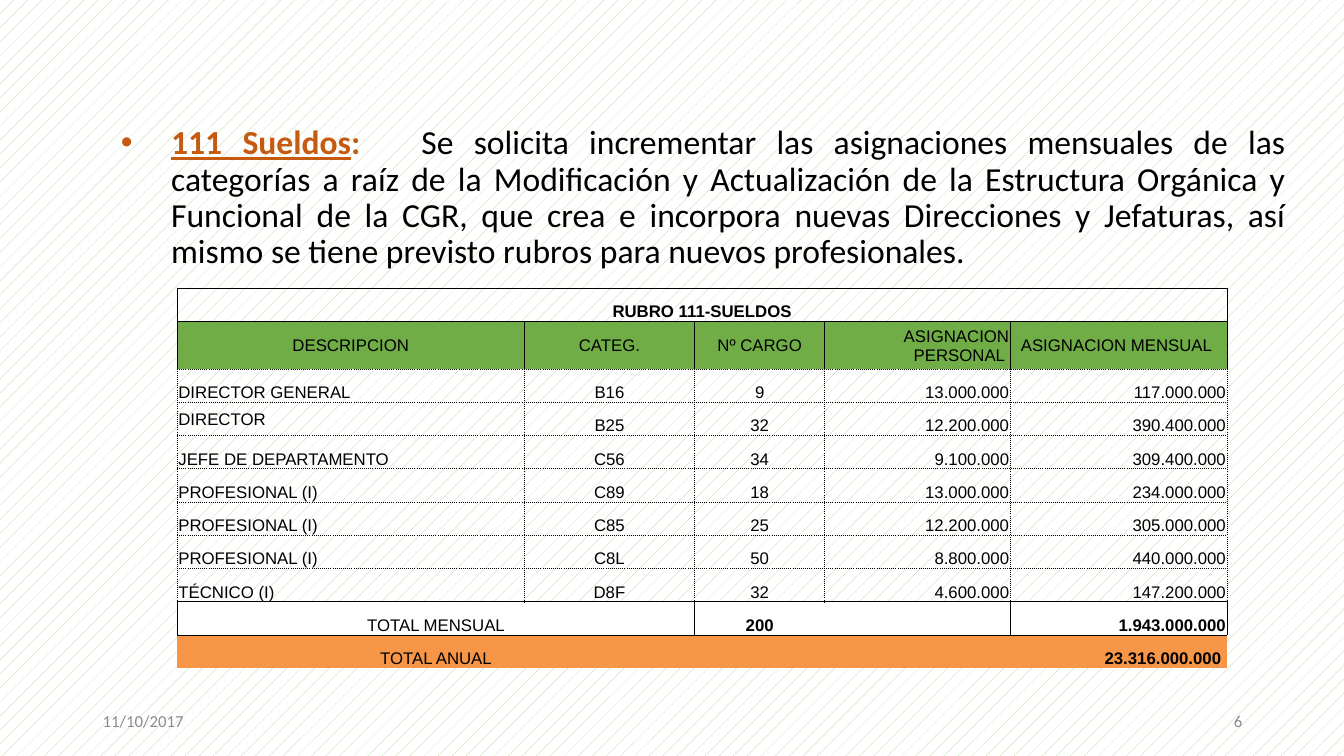
from dataclasses import dataclass

from lxml import etree
from pptx import Presentation
from pptx.dml.color import RGBColor
from pptx.enum.dml import MSO_PATTERN
from pptx.enum.text import MSO_ANCHOR, PP_ALIGN
from pptx.oxml.ns import qn
from pptx.util import Inches, Pt

LEFT, CENTER, RIGHT, JUSTIFY = PP_ALIGN.LEFT, PP_ALIGN.CENTER, PP_ALIGN.RIGHT, PP_ALIGN.JUSTIFY
TOP, MIDDLE, BOTTOM = MSO_ANCHOR.TOP, MSO_ANCHOR.MIDDLE, MSO_ANCHOR.BOTTOM
DOTS = MSO_PATTERN.PERCENT_5

WIDTH, HEIGHT = Inches(13.33), Inches(7.5)
BLACK, WHITE, GREY = "000000", "FFFFFF", "8C8C8C"
GREEN, PALE_GREEN, ORANGE, RUST = "70AD47", "A9D18E", "F79646", "C55A11"
NO_STYLE = "{2D5ABB26-0587-4C30-8999-92F81FD0307C}"
DASHES = {"S": "solid", "D": "dot"}

COLUMNS = (25.81, 12.68, 9.68, 13.8, 16.13)
ROW, HEADER_ROW = 4.4, 6.27
BODY_ALIGNS = (LEFT, CENTER, CENTER, RIGHT, RIGHT)
TOTAL_ALIGNS = (CENTER, CENTER, CENTER, RIGHT, RIGHT)


@dataclass
class Box:
    """Left, top, width and height as percentages of the slide."""
    left: float
    top: float
    width: float
    height: float

    def emu(self) -> tuple:
        return across(self.left), down(self.top), across(self.width), down(self.height)


@dataclass
class Row:
    """One table row; borders run left, right, top, bottom (Solid, Dotted, None)."""
    texts: tuple
    aligns: tuple = BODY_ALIGNS
    borders: str = "DDDD"
    fill: str = ""
    height: float = ROW
    span: int = 1
    bold_from: int = 5
    anchor: int = BOTTOM
    first_anchor: int = BOTTOM
    open_between: tuple = ()


ROWS = (
    Row(("RUBRO 111-SUELDOS", "", "", "", ""), TOTAL_ALIGNS, "SSSS", span=5, bold_from=0),
    Row(("DESCRIPCION", "CATEG.", "Nº CARGO", "ASIGNACION PERSONAL ", "ASIGNACION MENSUAL "),
        (CENTER, CENTER, CENTER, RIGHT, CENTER), "SSSD", GREEN, HEADER_ROW,
        anchor=MIDDLE, first_anchor=MIDDLE),
    Row(("DIRECTOR GENERAL", "B16", "9", "13.000.000", "117.000.000")),
    Row(("DIRECTOR", "B25", "32", "12.200.000", "390.400.000"), first_anchor=MIDDLE),
    Row(("JEFE DE DEPARTAMENTO", "C56", "34", "9.100.000", "309.400.000")),
    Row(("PROFESIONAL (I)", "C89", "18", "13.000.000", "234.000.000")),
    Row(("PROFESIONAL (I)", "C85", "25", "12.200.000", "305.000.000")),
    Row(("PROFESIONAL (I)", "C8L", "50", "8.800.000", "440.000.000")),
    Row(("TÉCNICO (I)", "D8F", "32", "4.600.000", "147.200.000"), borders="DDDS"),
    Row(("TOTAL MENSUAL", "", "200", "", "1.943.000.000"), TOTAL_ALIGNS, "SSSS", WHITE,
        span=2, bold_from=2, open_between=(2, 3)),
    Row(("TOTAL ANUAL", "", "", "", "23.316.000.000 "), TOTAL_ALIGNS, "NNSN", ORANGE,
        span=2, bold_from=2),
)


def across(percent: float) -> int:
    """Turn a percentage of the slide width into a length."""
    return int(WIDTH * percent / 100)


def down(percent: float) -> int:
    """Turn a percentage of the slide height into a length."""
    return int(HEIGHT * percent / 100)


def rgb(value: str) -> RGBColor:
    """Turn a hex string into a colour."""
    return RGBColor.from_string(value)


def add_run(p, text: str, color: str = BLACK, **formats):
    """Add a run with the given font formats."""
    r = p.add_run()
    r.text = text
    r.font.color.rgb = rgb(color)
    for name, value in formats.items():
        setattr(r.font, name, value)
    return r


def add_box(s, box: Box, align: int, anchor: int):
    """Add a wrapping text box and give back its first paragraph."""
    tf = s.shapes.add_textbox(*box.emu()).text_frame
    tf.word_wrap = True
    tf.vertical_anchor = anchor
    p = tf.paragraphs[0]
    p.alignment = align
    return p


def add_bullet(p, color: str) -> None:
    """Give a paragraph a hanging round bullet."""
    pPr = p._p.get_or_add_pPr()
    pPr.set("marL", str(Inches(0.5)))
    pPr.set("indent", str(-Inches(0.5)))
    clr = etree.SubElement(pPr, qn("a:buClr"))
    etree.SubElement(clr, qn("a:srgbClr"), val=color)
    etree.SubElement(pPr, qn("a:buFont"), typeface="Arial")
    etree.SubElement(pPr, qn("a:buChar"), char="•")


def set_borders(cell, kinds: str) -> None:
    """Draw the four sides of a cell."""
    tcPr = cell._tc.get_or_add_tcPr()
    for side, kind in zip("LRTB", kinds):
        ln = etree.SubElement(tcPr, qn(f"a:ln{side}"), w=str(Pt(0.5)))
        if kind == "N":
            etree.SubElement(ln, qn("a:noFill"))
        else:
            fill = etree.SubElement(ln, qn("a:solidFill"))
            etree.SubElement(fill, qn("a:srgbClr"), val=BLACK)
            etree.SubElement(ln, qn("a:prstDash"), val=DASHES[kind])


def fill_cell(cell, row: Row, i: int) -> None:
    """Write and format one cell of a row."""
    left, right, top, bottom = row.borders
    if i in row.open_between[:1]:
        right = "N"
    if i in row.open_between[1:]:
        left = "N"
    set_borders(cell, left + right + top + bottom)
    if row.fill:
        cell.fill.solid()
        cell.fill.fore_color.rgb = rgb(row.fill)
    else:
        cell.fill.background()
    margin = Inches(0.01)
    formats = {"margin_left": margin, "margin_top": margin, "margin_right": margin,
               "margin_bottom": 0,
               "vertical_anchor": row.anchor if i else row.first_anchor}
    for name, value in formats.items():
        setattr(cell, name, value)
    p = cell.text_frame.paragraphs[0]
    p.alignment = row.aligns[i]
    if row.texts[i]:
        add_run(p, row.texts[i], name="Arial", size=Pt(12), bold=i >= row.bold_from)


def add_salaries(s, box: Box) -> None:
    """Add the salary table."""
    table = s.shapes.add_table(len(ROWS), len(COLUMNS), *box.emu()).table
    table.first_row = table.horz_banding = False
    table._tbl.tblPr.find(qn("a:tableStyleId")).text = NO_STYLE
    for column, width in zip(table.columns, COLUMNS):
        column.width = across(width)
    for j, row in enumerate(ROWS):
        table.rows[j].height = down(row.height)
        for i in range(len(COLUMNS)):
            fill_cell(table.cell(j, i), row, i)
        if row.span > 1:
            table.cell(j, 0).merge(table.cell(j, row.span - 1))


def main() -> None:
    """Build the slide and save it."""
    prs = Presentation()
    prs.slide_width, prs.slide_height = WIDTH, HEIGHT
    s = prs.slides.add_slide(prs.slide_layouts[6])
    fill = s.background.fill
    fill.patterned()
    fill.pattern = DOTS
    fill.fore_color.rgb, fill.back_color.rgb = rgb(PALE_GREEN), rgb(WHITE)

    for text, left, align in (("11/10/2017", 6.9, LEFT), ("6", 70.67, RIGHT)):
        p = add_box(s, Box(left, 92.67, 22.5, 5.33), align, MIDDLE)
        add_run(p, text, GREY, name="Calibri", size=Pt(12))

    p = add_box(s, Box(8.25, 16, 88.15, 76.53), JUSTIFY, TOP)
    add_bullet(p, RUST)
    p.line_spacing = 0.9
    font = {"name": "Calibri", "size": Pt(24)}
    add_run(p, "111 Sueldos", RUST, bold=True, underline=True, **font)
    add_run(p, ":", RUST, bold=True, **font)
    gap = add_run(p, " ", RUST, bold=True, **font)
    gap._r.get_or_add_rPr().set("spc", "2900")
    add_run(p, "Se solicita incrementar las asignaciones mensuales de las categorías a raíz de la "
               "Modificación y Actualización de la Estructura Orgánica y Funcional de la CGR, que "
               "crea e incorpora nuevas Direcciones y Jefaturas, así mismo se tiene previsto "
               "rubros para nuevos profesionales.", **font)

    add_salaries(s, Box(13.2, 38.13, 78.1, 50.27))
    prs.save("out.pptx")


if __name__ == "__main__":
    main()
